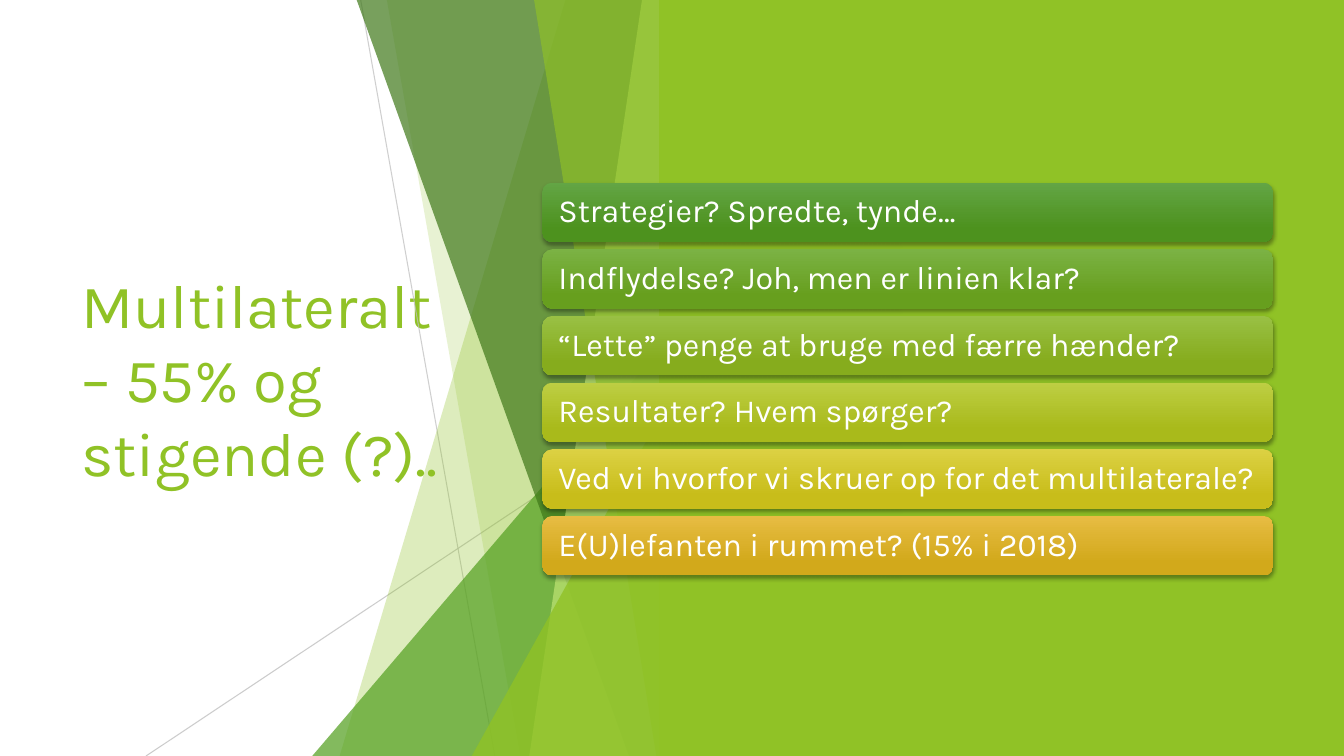
from pptx import Presentation
from pptx.dml.color import RGBColor
from pptx.enum.shapes import MSO_CONNECTOR, MSO_SHAPE
from pptx.enum.text import MSO_ANCHOR, MSO_AUTO_SIZE, PP_ALIGN
from pptx.oxml import parse_xml
from pptx.oxml.ns import nsdecls, qn
from pptx.util import Cm, Pt
from lxml.etree import SubElement

LIME = RGBColor(0x90, 0xC2, 0x26)
PALE_LIME = RGBColor(0xC0, 0xE4, 0x74)
GREEN = RGBColor(0x54, 0xA0, 0x21)
DARK_GREEN = RGBColor(0x3F, 0x78, 0x19)
GREY = RGBColor(0xBF, 0xBF, 0xBF)
WHITE = RGBColor(0xFF, 0xFF, 0xFF)

WIDTH, HEIGHT = 33.87, 19.05
FACET_RIGHT = 16.92
BAR_LEFT, BAR_TOP, BAR_WIDTH, BAR_HEIGHT, BAR_PITCH = 13.67, 4.6, 18.42, 1.5, 1.68

BARS = [
    ("Strategier? Spredte, tynde…", "63A545", "4D921E"),
    ("Indflydelse? Joh, men er linien klar?", "7BB244", "679F1E"),
    ("“Lette” penge at bruge med færre hænder?", "99C044", "86AC1D"),
    ("Resultater? Hvem spørger?", "BDCE43", "A9BA1B"),
    ("Ved vi hvorfor vi skruer op for det multilaterale?", "DCD143", "C8BD1A"),
    ("E(U)lefanten i rummet? (15% i 2018)", "E7BC43", "D2A91B"),
]


class SlideBuilder:
    font_name = "Karla"

    def __init__(self, slide):
        self.slide = slide
        self.shapes = slide.shapes

    def set_alpha(self, shape, percent):
        color = next(shape.element.iter(qn("a:srgbClr")))
        SubElement(color, qn("a:alpha")).set("val", str(percent * 1000))

    def format_text(self, paragraph, size, color):
        paragraph.alignment = PP_ALIGN.LEFT
        for run in paragraph.runs:
            run.font.name = self.font_name
            run.font.size = Pt(size)
            run.font.color.rgb = color

    def paint(self, shape, color, alpha=100):
        shape.shadow.inherit = False
        shape.line.fill.background()
        shape.fill.solid()
        shape.fill.fore_color.rgb = color
        if alpha < 100:
            self.set_alpha(shape, alpha)

    def title(self, text, left, top, width, height):
        title = self.shapes.title
        title.left, title.top = Cm(left), Cm(top)
        title.width, title.height = Cm(width), Cm(height)
        frame = title.text_frame
        frame.text = text
        frame.word_wrap = True
        frame.auto_size = MSO_AUTO_SIZE.NONE
        frame.vertical_anchor = MSO_ANCHOR.MIDDLE
        self.format_text(frame.paragraphs[0], 44, LIME)

    def line(self, start, end, alpha):
        line = self.shapes.add_connector(
            MSO_CONNECTOR.STRAIGHT, *map(Cm, start + end))
        line.line.color.rgb = GREY
        line.line.width = Pt(0.75)
        self.set_alpha(line, alpha)
        SubElement(line.element.spPr, qn("a:effectLst"))

    def facet(self, top_x, bottom_x, color, alpha):
        builder = self.shapes.build_freeform(Cm(top_x), Cm(0))
        builder.add_line_segments([
            (Cm(FACET_RIGHT), Cm(0)),
            (Cm(FACET_RIGHT), Cm(HEIGHT)),
            (Cm(bottom_x), Cm(HEIGHT)),
        ], close=True)
        self.paint(builder.convert_to_shape(), color, alpha)

    def triangle(self, left, top, color, alpha):
        triangle = self.shapes.add_shape(
            MSO_SHAPE.ISOSCELES_TRIANGLE, Cm(left), Cm(top),
            Cm(FACET_RIGHT - left), Cm(HEIGHT - top))
        triangle.adjustments[0] = 1
        self.paint(triangle, color, alpha)

    def panel(self, left):
        panel = self.shapes.add_shape(
            MSO_SHAPE.RECTANGLE, Cm(left), Cm(0), Cm(WIDTH - left), Cm(HEIGHT))
        self.paint(panel, LIME)

    def bar(self, text, top, light, deep):
        bar = self.shapes.add_shape(
            MSO_SHAPE.ROUNDED_RECTANGLE, Cm(BAR_LEFT), Cm(top),
            Cm(BAR_WIDTH), Cm(BAR_HEIGHT))
        bar.line.fill.background()
        bar.fill.gradient()
        bar.fill.gradient_angle = 270
        for stop, position, color in zip(
                bar.fill.gradient_stops, (0, 0.78), (light, deep)):
            stop.position = position
            stop.color.rgb = RGBColor.from_string(color)
        bar.element.spPr.append(parse_xml(
            f'<a:effectLst {nsdecls("a")}>'
            f'<a:outerShdw blurRad="{Pt(3)}" dist="{Pt(2)}" dir="5400000" rotWithShape="0">'
            '<a:srgbClr val="000000"><a:alpha val="35000"/></a:srgbClr>'
            '</a:outerShdw></a:effectLst>'))
        frame = bar.text_frame
        frame.text = text
        frame.word_wrap = True
        frame.vertical_anchor = MSO_ANCHOR.MIDDLE
        frame.margin_left = frame.margin_right = Cm(0.33)
        paragraph = frame.paragraphs[0]
        paragraph.line_spacing = 0.9
        self.format_text(paragraph, 23, WHITE)


def main():
    presentation = Presentation()
    presentation.slide_width, presentation.slide_height = Cm(WIDTH), Cm(HEIGHT)
    slide = presentation.slides.add_slide(presentation.slide_layouts[5])
    builder = SlideBuilder(slide)

    builder.title("Multilateralt – 55% og stigende (?)..", 1.8, 3.84, 9.86, 11.38)
    builder.line((9.09, 0), (12.47, HEIGHT), 75)
    builder.line((FACET_RIGHT, 10.24), (3.68, HEIGHT), 80)
    builder.facet(14.25, 8.56, LIME, 30)
    builder.facet(9.75, 13.11, LIME, 20)
    builder.triangle(7.87, 8.46, GREEN, 72)
    builder.facet(8.99, 15.85, DARK_GREEN, 70)
    builder.facet(16.18, 13.34, PALE_LIME, 70)
    builder.facet(13.46, 16.54, LIME, 65)
    builder.triangle(11.89, 9.98, LIME, 80)
    builder.panel(16.61)
    for index, (text, light, deep) in enumerate(BARS):
        builder.bar(text, BAR_TOP + index * BAR_PITCH, light, deep)

    presentation.save("out.pptx")


if __name__ == "__main__":
    main()
